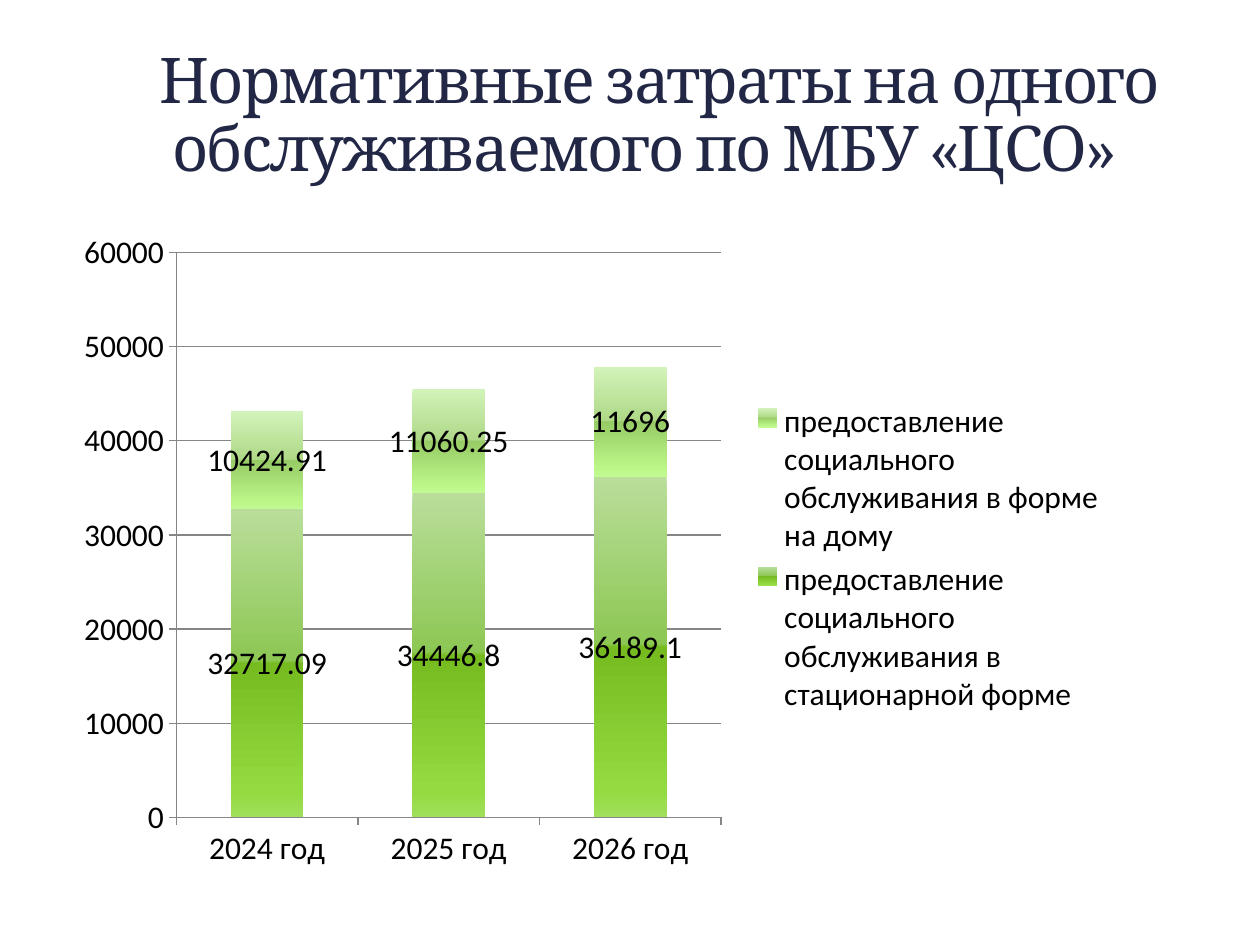
from typing import NamedTuple

import lxml.etree
import pptx
import pptx.chart.data
import pptx.dml.color
import pptx.enum.chart
import pptx.enum.text
import pptx.oxml
import pptx.oxml.ns
import pptx.util

WIDTH, HEIGHT = 10, 7.5
GRID_GRAY = "868686"
YEARS = ["2024 год", "2025 год", "2026 год"]


class Box(NamedTuple):
    """Shares of the width and height of the parent."""
    left: float
    top: float
    width: float
    height: float


class TitleLine(NamedTuple):
    text: str
    indent: float  # share of the slide width


class Service(NamedTuple):
    name: str
    costs: list[float]
    gradient: list[tuple[int, str]]  # percent from the top, colour


TITLE_BOX = Box(0.05, 0.04, 0.907, 0.167)
CHART_BOX = Box(0.05, 0.233, 0.833, 0.7)
PLOT_BOX = Box(0.108, 0.049, 0.519, 0.854)
LEGEND_BOX = Box(0.652, 0.265, 0.345, 0.49)

TITLE = [
    TitleLine("Нормативные затраты на одного", 0.067),
    TitleLine("обслуживаемого по МБУ «ЦСО»", 0.077),
]
SERVICES = [
    Service("предоставление социального обслуживания в стационарной форме",
            [32717.09, 34446.8, 36189.1],
            [(0, "B9DE99"), (49, "8DC754"), (50, "76BC21"), (92, "93DB40"), (100, "A0E05C")]),
    Service("предоставление социального обслуживания в форме на дому",
            [10424.91, 11060.25, 11696],
            [(0, "D2F3BA"), (49, "AFD987"), (50, "97CB66"), (92, "BBF688"), (100, "C2FA92")]),
]


def rgb(color: str) -> pptx.dml.color.RGBColor:
    return pptx.dml.color.RGBColor.from_string(color)


def on_slide(box: Box) -> list[int]:
    sizes = (WIDTH, HEIGHT, WIDTH, HEIGHT)
    return [pptx.util.Inches(share * size) for share, size in zip(box, sizes)]


def add_title(slide, lines: list[TitleLine]) -> None:
    frame = slide.shapes.add_textbox(*on_slide(TITLE_BOX)).text_frame
    frame.word_wrap = True
    frame.vertical_anchor = pptx.enum.text.MSO_ANCHOR.MIDDLE
    frame.text = "\n".join(line.text for line in lines)
    for paragraph, line in zip(frame.paragraphs, lines):
        paragraph.line_spacing = 0.9
        indent = pptx.util.Inches(line.indent * WIDTH)
        paragraph._p.get_or_add_pPr().set("marL", str(indent))
        for run in paragraph.runs:
            run.font.size = pptx.util.Pt(36)
            run.font.name = "Cambria"
            run.font.color.rgb = rgb("212745")
            run._r.get_or_add_rPr().set("spc", "-100")


def place(element, box: Box, index: int, inner: bool = False) -> None:
    """Give a chart part a fixed place within the chart."""
    qn = pptx.oxml.ns.qn
    for old in element.findall(qn("c:layout")):
        element.remove(old)
    layout = lxml.etree.Element(qn("c:layout"))
    manual = lxml.etree.SubElement(layout, qn("c:manualLayout"))
    settings = [("layoutTarget", "inner")] if inner else []
    settings += [("xMode", "edge"), ("yMode", "edge")]
    settings += zip("xywh", map(str, box))
    for tag, value in settings:
        lxml.etree.SubElement(manual, qn(f"c:{tag}")).set("val", value)
    element.insert(index, layout)


def fill_gradient(fill, stops: list[tuple[int, str]]) -> None:
    """Fill from top to bottom with any number of stops."""
    qn = pptx.oxml.ns.qn
    fill.gradient()
    fill.gradient_angle = 270
    stop_list = next(fill._xPr.iter(qn("a:gsLst")))
    for old in list(stop_list):
        stop_list.remove(old)
    for percent, color in stops:
        stop = lxml.etree.SubElement(stop_list, qn("a:gs"))
        stop.set("pos", str(percent * 1000))
        lxml.etree.SubElement(stop, qn("a:srgbClr")).set("val", color)


def add_costs_chart(slide, services: list[Service]) -> None:
    data = pptx.chart.data.CategoryChartData()
    data.categories = YEARS
    for service in services:
        data.add_series(service.name, service.costs)
    chart = slide.shapes.add_chart(
        pptx.enum.chart.XL_CHART_TYPE.COLUMN_STACKED, *on_slide(CHART_BOX), data).chart
    chart.has_title = False
    chart.font.size = pptx.util.Pt(18)
    chart.font.name = "Calibri"
    chart.font.color.rgb = rgb("000000")

    # Columns and their values
    plot = chart.plots[0]
    plot.gap_width, plot.overlap = 150, 100
    plot.vary_by_categories = False
    for series, service in zip(plot.series, services):
        fill_gradient(series.format.fill, service.gradient)
        series.data_labels.show_value = True

    # Axes and gridlines
    costs_axis = chart.value_axis
    costs_axis.minimum_scale, costs_axis.maximum_scale = 0, 60000
    costs_axis.major_unit = 10000
    costs_axis.has_major_gridlines = True
    costs_axis.major_gridlines.format.line.color.rgb = rgb(GRID_GRAY)
    for axis in (chart.category_axis, costs_axis):
        axis.major_tick_mark = pptx.enum.chart.XL_TICK_MARK.OUTSIDE
        axis.format.line.color.rgb = rgb(GRID_GRAY)

    # Legend and placement
    chart.has_legend = True
    chart.legend.position = pptx.enum.chart.XL_LEGEND_POSITION.RIGHT
    chart.legend.include_in_layout = False
    place(chart.legend._element, LEGEND_BOX, 1)
    place(chart._chartSpace.chart.plotArea, PLOT_BOX, 0, inner=True)


def main() -> None:
    deck = pptx.Presentation()
    deck.slide_width = pptx.util.Inches(WIDTH)
    deck.slide_height = pptx.util.Inches(HEIGHT)
    slide = deck.slides.add_slide(deck.slide_layouts[6])
    add_title(slide, TITLE)
    add_costs_chart(slide, SERVICES)
    deck.save("out.pptx")


if __name__ == "__main__":
    main()
